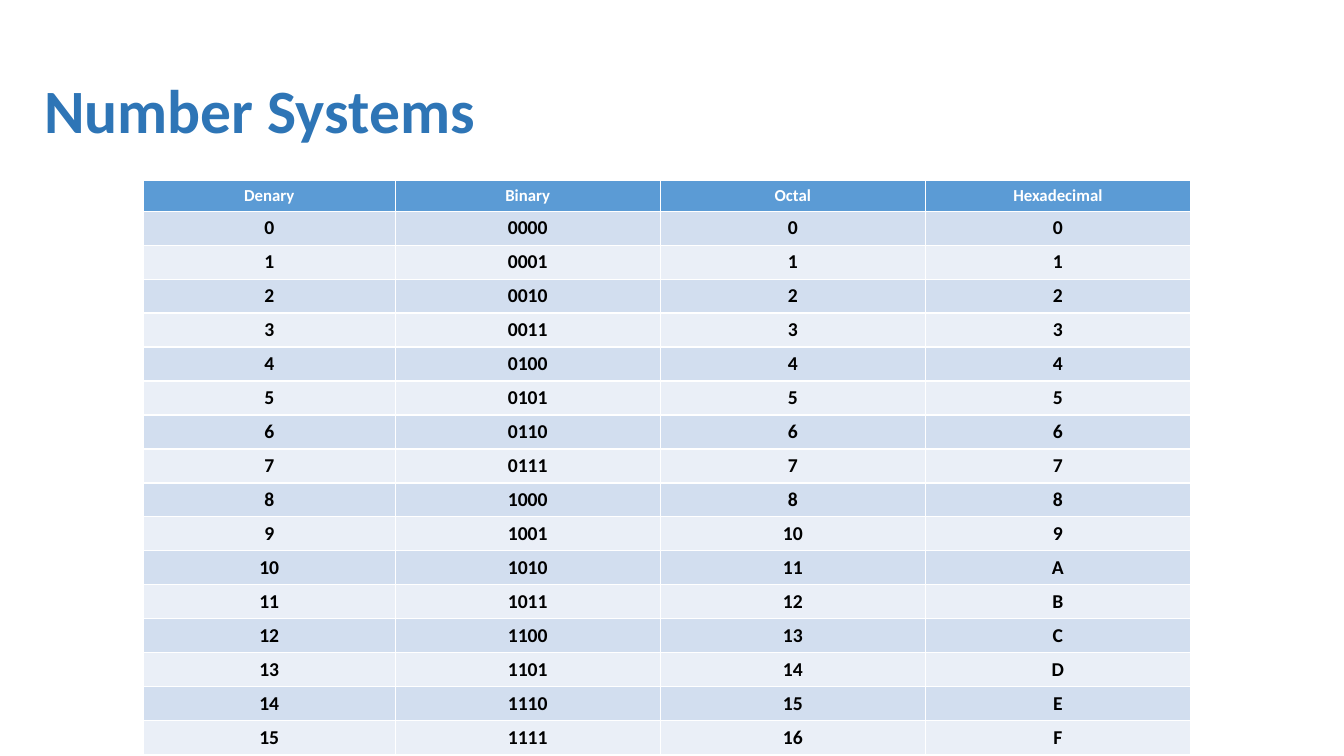
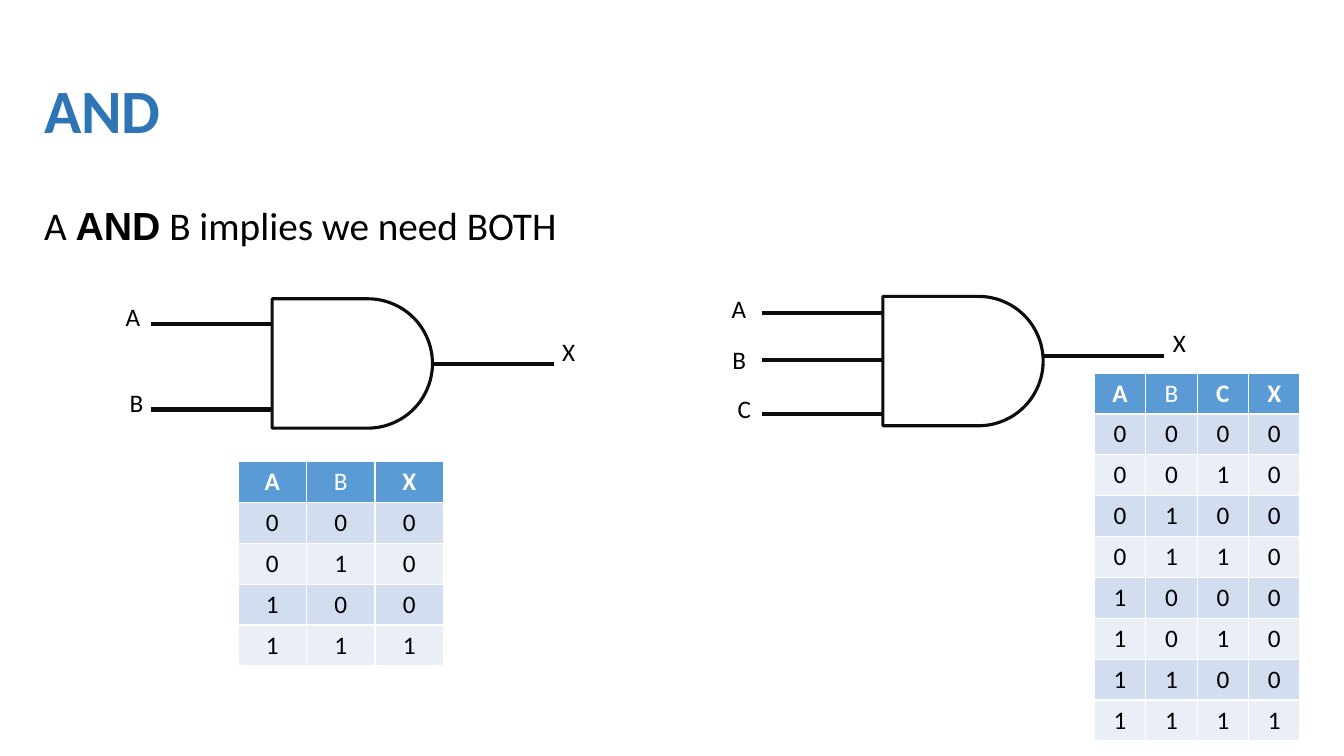
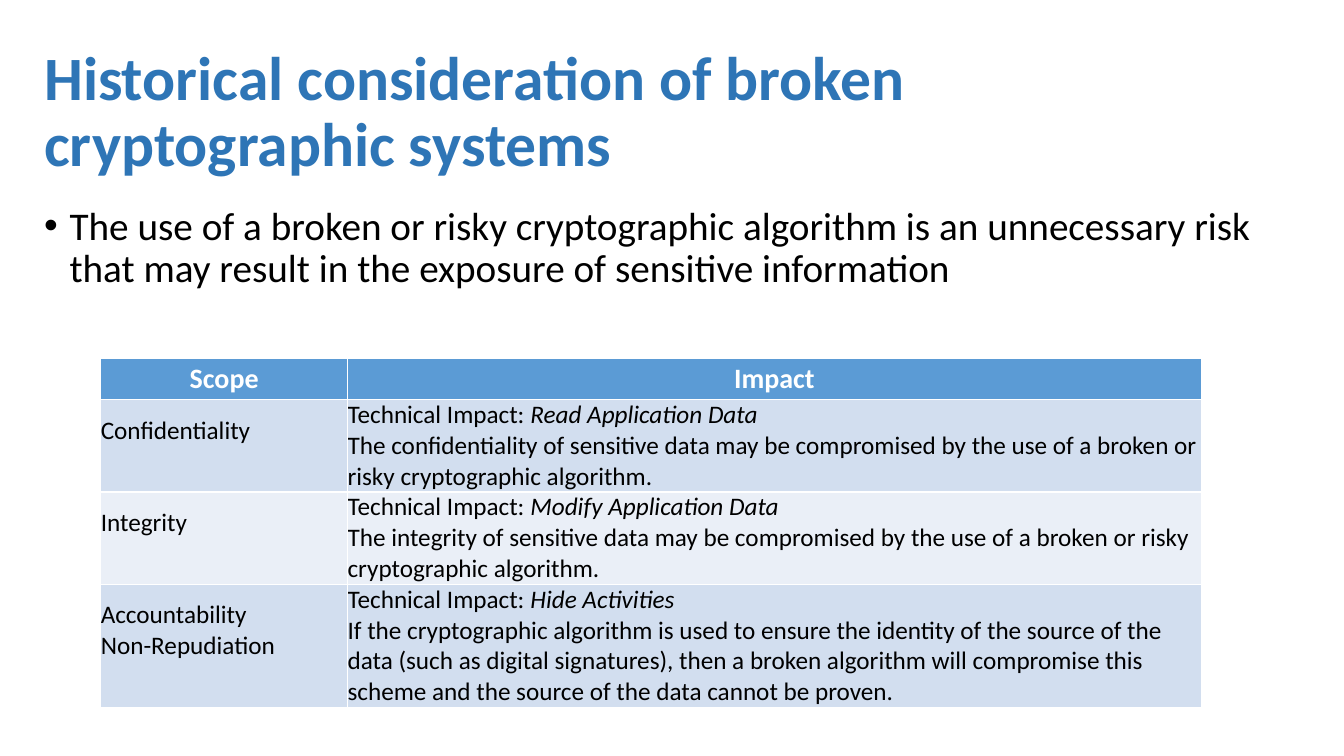
from dataclasses import dataclass
from itertools import product
from math import cos, pi, sin

from lxml.etree import SubElement
from pptx import Presentation
from pptx.dml.color import RGBColor
from pptx.enum.shapes import MSO_CONNECTOR
from pptx.enum.text import MSO_ANCHOR, MSO_AUTO_SIZE, PP_ALIGN
from pptx.oxml.ns import qn
from pptx.util import Cm, Pt


@dataclass(frozen=True)
class Theme:
    font: str = "Calibri"
    emphasis_font: str = "Arial"
    title: str = "2E75B6"
    ink: str = "000000"
    gate: str = "0D0D0D"
    header: str = "5B9BD5"
    header_ink: str = "FFFFFF"
    bands: tuple = ("D2DEEF", "EAEFF7")
    title_size: int = 44
    body_size: int = 28
    heading_size: int = 20
    text_size: int = 18
    number_size: int = 14
    small_size: int = 12


THEME = Theme()
TITLE_ONLY, TITLE_AND_BODY = 5, 1
TEXT_LEFT, TEXT_WIDTH = 0.86, 32.21
TITLE_TOP, TITLE_HEIGHT = 1.02, 3.68
BODY_TOP = 5.08


def write(frame, paragraphs, *, size, color=THEME.ink, bold=False,
          align=PP_ALIGN.LEFT, line_spacing=None, bullet=None):
    """Fill a frame; a paragraph is a string or a list of strings and (text, format) pairs."""
    for index, runs in enumerate(paragraphs):
        paragraph = frame.paragraphs[0] if index == 0 else frame.add_paragraph()
        if bullet is not None:
            set_bullet(paragraph, bullet)
        paragraph.alignment = align
        paragraph.space_before = Pt(0)
        if line_spacing:
            paragraph.line_spacing = line_spacing
        for part in [runs] if isinstance(runs, str) else runs:
            text, style = (part, {}) if isinstance(part, str) else part
            run = paragraph.add_run()
            run.text = text
            run.font.name = style.get("font", THEME.font)
            run.font.size = Pt(size)
            run.font.bold = style.get("bold", bold)
            run.font.italic = style.get("italic", False)
            run.font.color.rgb = RGBColor.from_string(color)


def set_bullet(paragraph, symbol):
    """Give a paragraph a hanging bullet, or none for an empty symbol."""
    properties = paragraph._p.get_or_add_pPr()
    indent = Cm(0.64) if symbol else 0
    properties.set("marL", str(indent))
    properties.set("indent", str(-indent))
    if symbol:
        SubElement(properties, qn("a:buFont"), typeface="Arial")
        SubElement(properties, qn("a:buChar"), char=symbol)
    else:
        SubElement(properties, qn("a:buNone"))


def place(shape, left, top, width, height):
    shape.left, shape.top = Cm(left), Cm(top)
    shape.width, shape.height = Cm(width), Cm(height)


def add_titled_slide(deck, layout, heading, width=TEXT_WIDTH):
    slide = deck.slides.add_slide(deck.slide_layouts[layout])
    title = slide.shapes.title
    place(title, TEXT_LEFT, TITLE_TOP, width, TITLE_HEIGHT)
    title.text_frame.auto_size = MSO_AUTO_SIZE.NONE
    title.text_frame.vertical_anchor = MSO_ANCHOR.MIDDLE
    write(title.text_frame, [heading], size=THEME.title_size,
          color=THEME.title, bold=True, line_spacing=0.9)
    return slide


def add_body(slide, paragraphs, height, bullet):
    body = slide.placeholders[1]
    place(body, TEXT_LEFT, BODY_TOP, TEXT_WIDTH, height)
    body.text_frame.auto_size = MSO_AUTO_SIZE.NONE
    write(body.text_frame, paragraphs, size=THEME.body_size,
          line_spacing=0.9, bullet=bullet)


def add_banded_table(slide, left, top, widths, row_height, header, rows, *,
                     header_size=THEME.text_size, size=THEME.text_size,
                     bold=False, align=PP_ALIGN.CENTER, tight=False):
    """Draw a header and banded rows; each cell is a list of paragraphs."""
    table = slide.shapes.add_table(
        len(rows) + 1, len(widths), Cm(left), Cm(top),
        Cm(sum(widths)), Cm(row_height * (len(rows) + 1))).table
    for column, width in zip(table.columns, widths):
        column.width = Cm(width)
    for row_index, row in enumerate([header, *rows]):
        table.rows[row_index].height = Cm(row_height)
        is_header = row_index == 0
        fill = THEME.header if is_header else THEME.bands[(row_index - 1) % 2]
        for column_index, paragraphs in enumerate(row):
            cell = table.cell(row_index, column_index)
            cell.fill.solid()
            cell.fill.fore_color.rgb = RGBColor.from_string(fill)
            if tight:
                cell.margin_left = cell.margin_right = 0
                cell.margin_top = cell.margin_bottom = 0
                cell.vertical_anchor = MSO_ANCHOR.MIDDLE
            write(cell.text_frame, paragraphs,
                  size=header_size if is_header else size,
                  color=THEME.header_ink if is_header else THEME.ink,
                  bold=is_header or bold,
                  align=PP_ALIGN.CENTER if is_header else align)
    return table


def add_truth_table(slide, left, top, inputs, width=5.18):
    """List every input combination with the AND of its bits."""
    names = [*inputs, "X"]
    header = [[[(name, {"bold": name != "B"})]] for name in names]
    rows = [[[str(bit)] for bit in (*bits, min(bits))]
            for bits in product((0, 1), repeat=len(inputs))]
    add_banded_table(slide, left, top, [width / len(names)] * len(names),
                     1.03, header, rows)


def add_wire(parts, start_x, end_x, y):
    wire = parts.add_connector(MSO_CONNECTOR.STRAIGHT,
                               Cm(start_x), Cm(y), Cm(end_x), Cm(y))
    wire.line.color.rgb = RGBColor.from_string(THEME.gate)
    wire.line.width = Pt(3)
    SubElement(wire._element.spPr, qn("a:effectLst"))


def add_pin_label(parts, name, left, top):
    frame = parts.add_textbox(Cm(left), Cm(top), Cm(0.87), Cm(1.02)).text_frame
    frame.word_wrap = False
    frame.auto_size = MSO_AUTO_SIZE.SHAPE_TO_FIT_TEXT
    write(frame, [name], size=THEME.text_size)


def add_and_gate(slide, left, top, inputs, output_y):
    """Draw a gate; inputs are (name, wire y, label x, label y) from its top left."""
    straight, radius, wire_length, steps = 2.41, 1.63, 3.05, 48
    right = left + straight + radius
    parts = slide.shapes.add_group_shape().shapes

    # Gate outline: flat back and round front
    angles = [pi * step / steps - pi / 2 for step in range(steps + 1)]
    front = [(Cm(left + straight + radius * cos(angle)),
              Cm(top + radius + radius * sin(angle))) for angle in angles]
    outline = parts.build_freeform(Cm(left), Cm(top))
    outline.add_line_segments([*front, (Cm(left), Cm(top + 2 * radius))], close=True)
    gate = outline.convert_to_shape()
    gate.shadow.inherit = False
    gate.fill.background()
    gate.line.color.rgb = RGBColor.from_string(THEME.gate)
    gate.line.width = Pt(2.25)

    # Inputs and output
    for name, wire_y, label_x, label_y in inputs:
        add_wire(parts, left, left - wire_length, top + wire_y)
        add_pin_label(parts, name, left + label_x, top + label_y)
    add_wire(parts, right + wire_length, right, top + output_y)
    add_pin_label(parts, "X", right + 3.02, top + output_y - 0.84)


def build_number_systems(deck):
    slide = add_titled_slide(deck, TITLE_ONLY, "Number Systems")
    header = [[name] for name in ("Denary", "Binary", "Octal", "Hexadecimal")]
    # The octal column goes from 8 straight to 10
    rows = [[[str(n)], [f"{n:04b}"], [str(n + (n > 8))], [f"{n:X}"]]
            for n in range(16)]
    add_banded_table(slide, 3.61, 4.55, [6.35, 6.68, 6.68, 6.68], 0.74, header, rows,
                     header_size=THEME.small_size, size=THEME.number_size, bold=True)


def build_and(deck):
    slide = add_titled_slide(deck, TITLE_AND_BODY, "AND")
    add_body(slide, [["A ", ("AND", {"font": THEME.emphasis_font, "bold": True}),
                      " B implies we need BOTH"]], height=13.72, bullet="")
    # Two-input gate
    add_and_gate(slide, 6.86, 7.53,
                 [("A", 0.64, -3.94, -0.05), ("B", 2.79, -3.84, 2.11)], output_y=1.65)
    # Three-input gate
    add_and_gate(slide, 22.25, 7.47,
                 [("A", 0.41, -4.06, -0.2), ("B", 1.6, -4.04, 1.09),
                  ("C", 2.97, -3.91, 2.31)], output_y=1.5)
    add_truth_table(slide, 6.0, 11.63, "AB")
    add_truth_table(slide, 27.58, 9.4, "ABC")


def build_broken_cryptography(deck):
    slide = add_titled_slide(
        deck, TITLE_AND_BODY,
        "Historical consideration of broken cryptographic systems", width=27.08)
    add_body(slide, ["The use of a broken or risky cryptographic algorithm is an "
                     "unnecessary risk that may result in the exposure of "
                     "sensitive information"], height=3.73, bullet="•")
    impacts = [
        (["Confidentiality"], "Read Application Data",
         "The confidentiality of sensitive data may be compromised by the use of "
         "a broken or risky cryptographic algorithm."),
        (["Integrity"], "Modify Application Data",
         "The integrity of sensitive data may be compromised by the use of "
         "a broken or risky cryptographic algorithm."),
        (["Accountability", "Non-Repudiation"], "Hide Activities",
         "If the cryptographic algorithm is used to ensure the identity of the "
         "source of the data (such as digital signatures), then a broken algorithm "
         "will compromise this scheme and the source of the data cannot be proven."),
    ]
    rows = [[scope, [["Technical Impact:", (f" {impact}", {"italic": True})], detail]]
            for scope, impact, detail in impacts]
    table = add_banded_table(slide, 2.54, 9.04, [6.22, 21.51], 1.03,
                             [["Scope"], ["Impact"]], rows,
                             header_size=THEME.heading_size,
                             align=PP_ALIGN.LEFT, tight=True)
    # Scope names sit half a line above the middle
    for row_index in range(1, len(rows) + 1):
        table.cell(row_index, 0).margin_bottom = Cm(0.77)


def main():
    deck = Presentation()
    deck.slide_width, deck.slide_height = Cm(33.87), Cm(19.05)
    build_number_systems(deck)
    build_and(deck)
    build_broken_cryptography(deck)
    deck.save("out.pptx")


if __name__ == "__main__":
    main()
